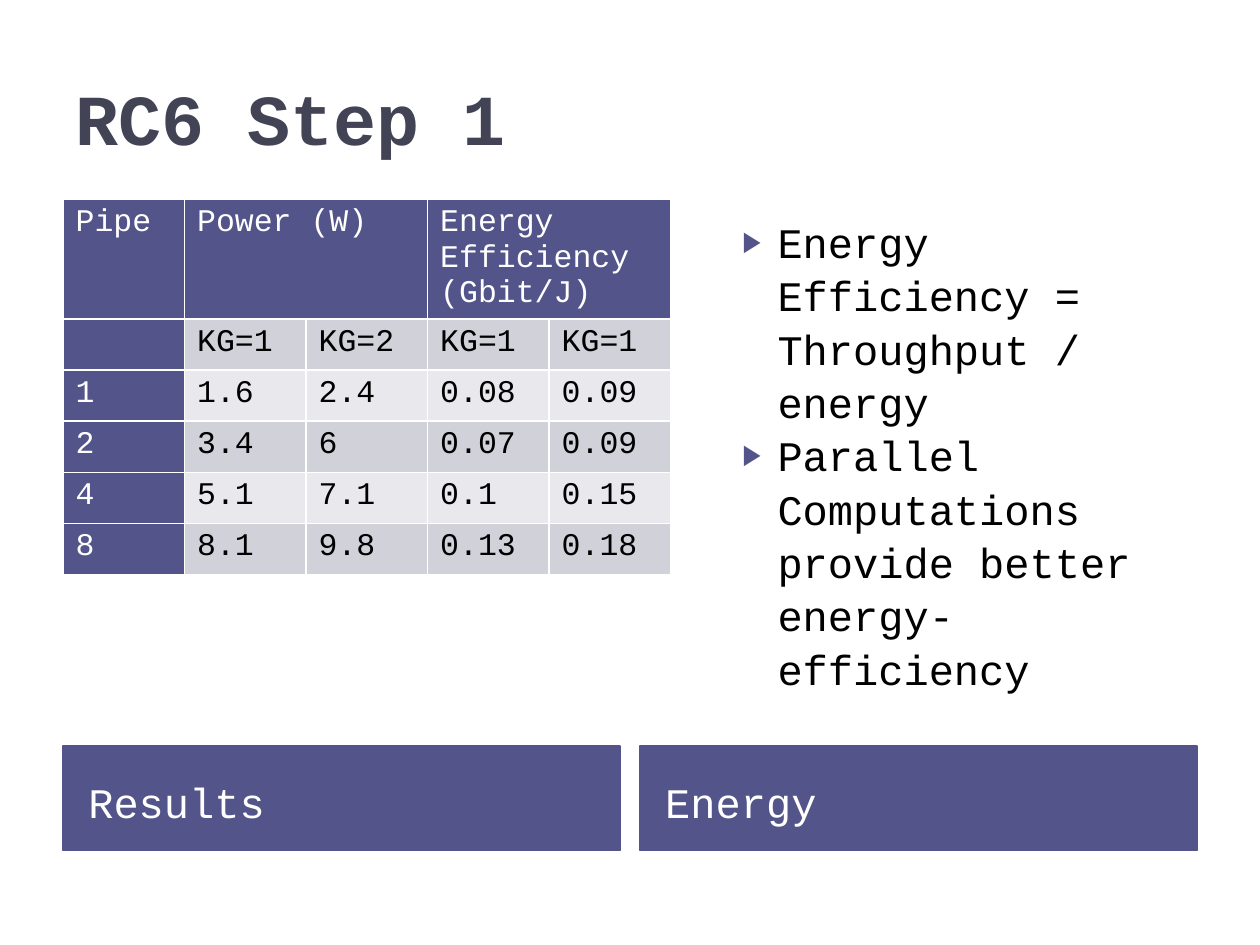
from lxml.etree import SubElement
from pptx import Presentation
from pptx.dml.color import RGBColor
from pptx.enum.text import MSO_ANCHOR, MSO_AUTO_SIZE, PP_ALIGN
from pptx.oxml.ns import qn
from pptx.util import Cm, Pt

FONT = "Courier New"
INDIGO, SLATE, WHITE, BLACK = "53548A", "424456", "FFFFFF", "000000"
BANDS = ("E9E9ED", "D1D1DA")
LEFT, TOP = 1.27, 4.01

ROWS = [
    ["Pipe", "Power (W)", "", "Energy Efficiency (Gbit/J)", ""],
    ["", "KG=1", "KG=2", "KG=1", "KG=1"],
    ["1", "1.6", "2.4", "0.08", "0.09"],
    ["2", "3.4", "6", "0.07", "0.09"],
    ["4", "5.1", "7.1", "0.1", "0.15"],
    ["8", "8.1", "9.8", "0.13", "0.18"],
]
FINDINGS = [
    "Energy Efficiency = Throughput / energy",
    "Parallel Computations provide better energy-efficiency",
]


def color(value):
    return RGBColor.from_string(value)


def style(paragraph, size, value, bold=False):
    paragraph.alignment = PP_ALIGN.LEFT
    paragraph.space_before = Pt(0)
    for run in paragraph.runs:
        run.font.name = FONT
        run.font.size = Pt(size)
        run.font.bold = bold
        run.font.color.rgb = color(value)


def place(shape, left, top, width, height):
    shape.left, shape.top = Cm(left), Cm(top)
    shape.width, shape.height = Cm(width), Cm(height)
    shape.text_frame.word_wrap = True
    shape.text_frame.auto_size = MSO_AUTO_SIZE.NONE


def add_title(shape, text):
    place(shape, LEFT, 0.76, 22.86, 3.18)
    shape.text_frame.text = text
    shape.text_frame.vertical_anchor = MSO_ANCHOR.MIDDLE
    style(shape.text_frame.paragraphs[0], 41, SLATE, bold=True)


def add_label(shape, text, left):
    place(shape, left, 15.04, 11.23, 2.11)
    shape.fill.solid()
    shape.fill.fore_color.rgb = color(INDIGO)
    shape.line.color.rgb = color(INDIGO)
    shape.line.width = Pt(0.75)
    frame = shape.text_frame
    frame.text = text
    frame.vertical_anchor = MSO_ANCHOR.MIDDLE
    frame.margin_left, frame.margin_top = Cm(0.51), Cm(0.27)
    style(frame.paragraphs[0], 24, WHITE)


def add_bullet(paragraph):
    properties = paragraph._p.get_or_add_pPr()
    properties.set("marL", str(Cm(1.02)))
    properties.set("indent", str(Cm(-0.71)))
    bullet_color = SubElement(properties, qn("a:buClr"))
    SubElement(bullet_color, qn("a:srgbClr"), val=INDIGO)
    SubElement(properties, qn("a:buSzPct"), val="68000")
    SubElement(properties, qn("a:buChar"), char="▶")


def add_list(shape, items):
    place(shape, 14.4, TOP, 9.73, 10.95)
    frame = shape.text_frame
    frame.margin_top = Cm(0.29)
    frame.text = "\n".join(items)
    for paragraph in frame.paragraphs:
        add_bullet(paragraph)
        style(paragraph, 24, BLACK)
        paragraph.line_spacing = 1.06


def add_borders(cell):
    properties = cell._tc.get_or_add_tcPr()
    for index, side in enumerate(("lnL", "lnR", "lnT", "lnB")):
        line = properties.makeelement(qn(f"a:{side}"), {"w": str(Pt(1))})
        fill = SubElement(line, qn("a:solidFill"))
        SubElement(fill, qn("a:srgbClr"), val=WHITE)
        properties.insert(index, line)


def add_results_table(slide):
    row_count, column_count = len(ROWS), len(ROWS[0])
    table = slide.shapes.add_table(
        row_count, column_count, Cm(LEFT), Cm(TOP), Cm(12.27), Cm(7.58)
    ).table
    for column in table.columns:
        column.width = Cm(2.45)
    for index, row in enumerate(table.rows):
        row.height = Cm(1.03 if index else 2.42)
    # Each measure in the header covers two columns
    for column in (1, 3):
        table.cell(0, column).merge(table.cell(0, column + 1))
    for row, values in enumerate(ROWS):
        for column, value in enumerate(values):
            cell = table.cell(row, column)
            heading = row == 0 or column == 0
            cell.fill.solid()
            cell.fill.fore_color.rgb = color(INDIGO if heading else BANDS[row % 2])
            add_borders(cell)
            if not cell.is_spanned:
                cell.text_frame.text = value
                style(cell.text_frame.paragraphs[0], 18, WHITE if heading else BLACK)


def main():
    presentation = Presentation()
    presentation.slide_width, presentation.slide_height = Cm(25.4), Cm(19.05)
    # Comparison layout: title, two labels and two content areas
    slide = presentation.slides.add_slide(presentation.slide_layouts[4])
    title, left_label, left_content, right_label, right_content = slide.placeholders

    add_title(title, "RC6 Step 1")
    add_label(left_label, "Results", LEFT)
    add_label(right_label, "Energy", 12.9)
    add_list(right_content, FINDINGS)

    # The table takes the place of the left content area
    left_content.element.getparent().remove(left_content.element)
    add_results_table(slide)
    presentation.save("out.pptx")


if __name__ == "__main__":
    main()
